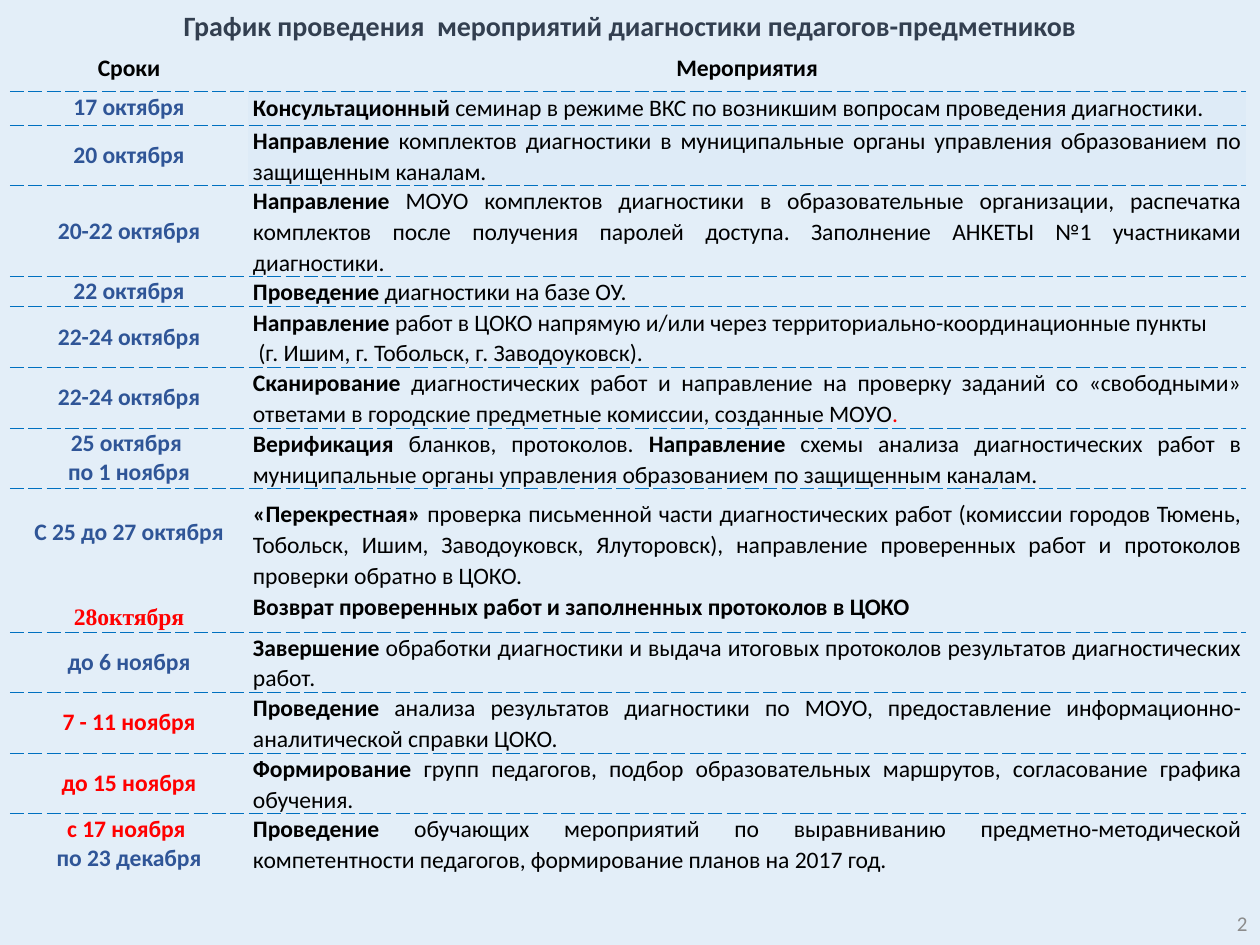
"""Build the schedule slide for the diagnostics of subject teachers."""
from dataclasses import dataclass

from lxml.etree import SubElement
from pptx import Presentation
from pptx.dml.color import RGBColor as Color
from pptx.enum.text import MSO_ANCHOR as Anchor, MSO_AUTO_SIZE as AutoSize, PP_ALIGN as Align
from pptx.oxml.ns import qn
from pptx.util import Cm, Pt


@dataclass(frozen=True)
class Theme:
    """Colours, fonts and type sizes of the slide."""
    background: str = "E3EEF8"
    title: str = "333F50"
    date: str = "2F5597"
    alert: str = "FF0000"
    text: str = "000000"
    number: str = "8C8C8C"
    border: str = "0070C0"
    highlight: str = "DEEBF7"
    font: str = "Calibri"
    serif: str = "Times New Roman"
    title_size: float = 16
    table_size: float = 13.5
    number_size: float = 12
    line_spacing: float = 1.07


THEME = Theme()
ROW_HEIGHTS = [0.74, 0.69, 1.22, 1.83, 0.61, 1.22, 1.22, 1.22, 2.88, 1.22, 1.22, 1.22, 1.22]
HIGHLIGHTED_ROWS = (1, 2)
BLANK_LINE = Pt(16.5)
SPLIT_ROW = 8


def date(text, color=THEME.date, font=THEME.font):
    """Return a date paragraph holding one bold run."""
    return [(text, True, color, font)]


def task(*texts):
    """Return a task paragraph whose runs alternate between bold and regular."""
    return [(text, index % 2 == 0, THEME.text, THEME.font) for index, text in enumerate(texts)]


SCHEDULE = [
    ([date("Сроки", THEME.text)], [task("Мероприятия")]),
    ([date("17 октября")],
     [task("Консультационный",
           " семинар в режиме ВКС по возникшим вопросам проведения диагностики.")]),
    ([date("20 октября")],
     [task("Направление", " комплектов диагностики в муниципальные органы управления "
           "образованием по защищенным каналам.")]),
    ([date("20-22 октября")],
     [task("Направление", " МОУО комплектов диагностики в образовательные организации, "
           "распечатка комплектов после получения паролей доступа. Заполнение АНКЕТЫ №1 "
           "участниками диагностики.")]),
    ([date("22 октября")], [task("Проведение", " диагностики на базе ОУ.")]),
    ([date("22-24 октября")],
     [task("Направление", " работ в ЦОКО напрямую и/или через "
           "территориально-координационные пункты"),
      task("", " (г. Ишим, г. Тобольск, г. Заводоуковск).")]),
    ([date("22-24 октября")],
     [task("Сканирование", " диагностических работ и направление на проверку заданий со "
           "«свободными» ответами в городские предметные комиссии, созданные МОУО")
      + [(". ", False, THEME.alert, THEME.font)]]),
    ([date("25 октября "), date("по 1 ноября")],
     [task("Верификация", " бланков, протоколов. ", "Направление",
           " схемы анализа диагностических работ в муниципальные органы управления "
           "образованием по защищенным каналам.")]),
    ([date("С 25 до 27 октября"), date("28октября", THEME.alert, THEME.serif)],
     [task("«Перекрестная» ", "проверка письменной части диагностических работ (комиссии "
           "городов Тюмень, Тобольск, Ишим, Заводоуковск, Ялуторовск), направление "
           "проверенных работ и протоколов проверки обратно в ЦОКО."),
      task("Возврат проверенных работ и заполненных протоколов в ЦОКО")]),
    ([date("до 6 ноября")],
     [task("Завершение", " обработки диагностики и выдача итоговых протоколов результатов "
           "диагностических работ. ")]),
    ([date("7 - 11 ноября", THEME.alert)],
     [task("Проведение ", "анализа результатов диагностики по МОУО, предоставление "
           "информационно-аналитической справки ЦОКО. ")]),
    ([date("до 15 ноября", THEME.alert)],
     [task("Формирование", " групп педагогов, подбор образовательных маршрутов, "
           "согласование графика обучения.")]),
    ([date("с 17 ноября ", THEME.alert), date("по 23 декабря")],
     [task("Проведение", " обучающих мероприятий по выравниванию предметно-методической "
           "компетентности педагогов, формирование планов на 2017 год.")]),
]


class SlideBuilder:
    """Hold the theme and the current slide and add elements to it."""

    def __init__(self, slide, theme):
        """Keep the slide and paint its background."""
        self.slide, self.theme = slide, theme
        fill = slide.background.fill
        fill.solid()
        fill.fore_color.rgb = Color.from_string(theme.background)

    def add_text(self, frame, paragraphs, size, align, spacing=None):
        """Add paragraphs of (text, bold, colour, font) runs to a text frame."""
        for index, runs in enumerate(paragraphs):
            paragraph = frame.add_paragraph() if index else frame.paragraphs[0]
            paragraph.alignment = align
            if spacing:
                paragraph.line_spacing = spacing
            for text, bold, color, name in runs:
                if not text:
                    continue
                run = paragraph.add_run()
                run.text = text
                run.font.size, run.font.bold, run.font.name = Pt(size), bold, name
                run.font.color.rgb = Color.from_string(color)

    def title(self, text):
        """Fill the title placeholder across the top of the slide."""
        shape = self.slide.shapes.title
        shape.left, shape.top, shape.width, shape.height = Cm(0), Cm(0), Cm(25.4), Cm(0.97)
        frame = shape.text_frame
        frame.auto_size, frame.vertical_anchor = AutoSize.NONE, Anchor.TOP
        self.add_text(frame, [date(text, self.theme.title)], self.theme.title_size,
                      Align.CENTER, self.theme.line_spacing)

    def page_number(self, text):
        """Add the page number in the bottom right corner."""
        box = self.slide.shapes.add_textbox(Cm(19.69), Cm(18.1), Cm(5.71), Cm(1.01))
        frame = box.text_frame
        frame.word_wrap, frame.vertical_anchor = True, Anchor.MIDDLE
        run = (text, False, self.theme.number, self.theme.font)
        self.add_text(frame, [[run]], self.theme.number_size, Align.RIGHT)

    def borders(self, cell, above, below):
        """Dash the chosen horizontal edges of a cell and clear the others."""
        properties = cell._tc.get_or_add_tcPr()
        for tag, visible in (("lnL", False), ("lnR", False), ("lnT", above), ("lnB", below)):
            line = SubElement(properties, qn(f"a:{tag}"), w=str(Pt(0.25)))
            if visible:
                fill = SubElement(line, qn("a:solidFill"))
                SubElement(fill, qn("a:srgbClr"), val=self.theme.border)
                SubElement(line, qn("a:prstDash"), val="sysDash")
            else:
                SubElement(line, qn("a:noFill"))

    def cell(self, cell, paragraphs, align, spacing, header):
        """Format a table cell and add its text."""
        cell.margin_left = cell.margin_right = Cm(0.1)
        cell.margin_top = cell.margin_bottom = Cm(0)
        cell.vertical_anchor = Anchor.TOP if header else Anchor.MIDDLE
        self.add_text(cell.text_frame, paragraphs, self.theme.table_size, align, spacing)

    def schedule(self, rows, heights):
        """Add the table of dates and tasks."""
        frame = self.slide.shapes.add_table(len(rows), 2, Cm(0.2), Cm(1.09),
                                            Cm(24.92), Cm(sum(heights)))
        table = frame.table
        table.first_row = table.horz_banding = False
        table.columns[0].width, table.columns[1].width = Cm(4.8), Cm(20.12)
        for row, (contents, height) in enumerate(zip(rows, heights)):
            table.rows[row].height = Cm(height)
            for column, paragraphs in enumerate(contents):
                cell = table.cell(row, column)
                is_task = column == 1 and row > 0
                self.cell(cell, paragraphs, Align.JUSTIFY if is_task else Align.CENTER,
                          self.theme.line_spacing if is_task else None, row == 0)
                self.borders(cell, row > 0, row < len(rows) - 1)
                if is_task and row in HIGHLIGHTED_ROWS:
                    cell.fill.solid()
                    cell.fill.fore_color.rgb = Color.from_string(self.theme.highlight)
                else:
                    cell.fill.background()
        split_cell = table.cell(SPLIT_ROW, 0)
        split_cell.margin_top = BLANK_LINE
        split_cell.text_frame.paragraphs[1].space_before = 2 * BLANK_LINE


def main():
    """Build and save the presentation."""
    presentation = Presentation()
    presentation.slide_width, presentation.slide_height = Cm(25.4), Cm(19.05)
    slide = presentation.slides.add_slide(presentation.slide_layouts[5])
    builder = SlideBuilder(slide, THEME)
    builder.title("График проведения  мероприятий диагностики педагогов-предметников")
    builder.page_number("2")
    builder.schedule(SCHEDULE, ROW_HEIGHTS)
    presentation.save("out.pptx")


if __name__ == "__main__":
    main()
